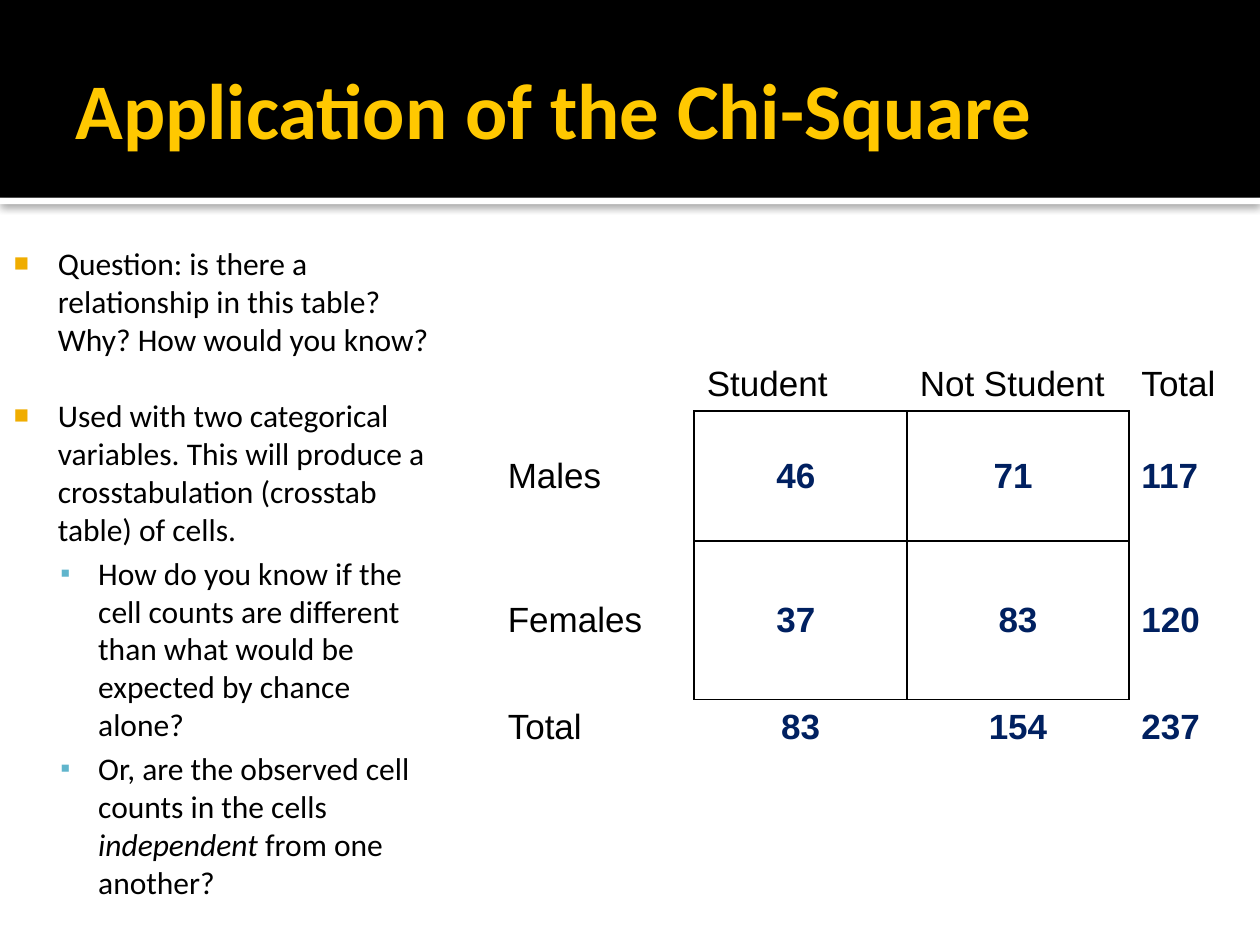
"""Build a slide on the chi-square test with a crosstab of observed counts."""
from lxml import etree
from pptx import Presentation
from pptx import util as u
from pptx.dml.color import RGBColor
from pptx.enum import shapes, text
from pptx.oxml import parse_xml
from pptx.oxml.ns import nsdecls, qn

BLACK, NAVY, GOLD = "000000", "002060", "FFC800"


def rgb(code):
    return RGBColor.from_string(code)


def write(para, words, size=18, face="Calibri", color=BLACK, bold=False, slant=False):
    run = para.add_run()
    run.text = words
    font = run.font
    font.size, font.name = u.Pt(size), face
    font.bold, font.italic = bold, slant
    font.color.rgb = rgb(color)


deck = Presentation()
deck.slide_width, deck.slide_height = u.Inches(10), u.Inches(7.5)
slide = deck.slides.add_slide(deck.slide_layouts[6])

for top, high, color in [(1.57, 0.05, "FFFFFF"), (0, 1.57, BLACK)]:
    band = slide.shapes.add_shape(shapes.MSO_SHAPE.RECTANGLE, 0, u.Inches(top),
                                  u.Inches(10), u.Inches(high))
    band.fill.solid()
    band.fill.fore_color.rgb = rgb(color)
    band.line.fill.background()
    band.shadow.inherit = False
    if top:
        band._element.spPr.find(qn("a:effectLst")).append(parse_xml(
            f'<a:outerShdw {nsdecls("a")} blurRad="{u.Pt(5)}" dist="{u.Pt(0.8)}" '
            f'dir="5400000" rotWithShape="0"><a:srgbClr val="{BLACK}">'
            '<a:alpha val="60000"/></a:srgbClr></a:outerShdw>'))

frames = []
for left, top, wide, high, inset in [(0.5, 0.17, 9, 1.37, 0.1),
                                     (-0.08, 1.84, 3.67, 5.3, 0.06)]:
    box = slide.shapes.add_textbox(*map(u.Inches, (left, top, wide, high)))
    frame = box.text_frame
    frame.word_wrap = True
    frame.margin_left = u.Inches(inset)
    frames.append(frame)
title, body = frames
title.vertical_anchor = text.MSO_ANCHOR.MIDDLE
write(title.paragraphs[0], "Application of the Chi-Square", size=45, color=GOLD, bold=True)

body.margin_top = u.Inches(0.1)
levels = [(0.48, -0.35, "■", "F0AD00", 80), (0.8, -0.3, "▪", "60B5CC", 90)]
points = [
    (0, 0, ["Question: is there a relationship in this table? Why? How would you know?"]),
    (0, 22, ["Used with two categorical variables. This will produce a crosstabulation "
             "(crosstab table) of cells."]),
    (1, 3.6, ["How do you know if the cell counts are different than what would be "
              "expected by chance alone?"]),
    (1, 3.6, ["Or, are the observed cell counts in the cells ", "independent",
              " from one another?"]),
]
for n, (level, gap, parts) in enumerate(points):
    para = body.add_paragraph() if n else body.paragraphs[0]
    para.level, para.space_before = level, u.Pt(gap)
    left, hang, mark, color, scale = levels[level]
    props = para._p.get_or_add_pPr()
    props.set("marL", str(u.Inches(left)))
    props.set("indent", str(u.Inches(hang)))
    tint = etree.SubElement(props, qn("a:buClr"))
    etree.SubElement(tint, qn("a:srgbClr"), val=color)
    etree.SubElement(props, qn("a:buSzPct"), val=str(scale * 1000))
    etree.SubElement(props, qn("a:buFont"), typeface="Arial")
    etree.SubElement(props, qn("a:buChar"), char=mark)
    for i, words in enumerate(parts):
        write(para, words, slant=i == 1)

rows = [
    ["", "Student", "Not Student", "Total"],
    ["Males", "46 ", "71 ", "117"],
    ["Females", "37 ", "83", "120"],
    ["Total", "83", "154", "237"],
]
grid = slide.shapes.add_table(4, 4, *map(u.Inches, (3.93, 2.83, 5.83, 3.15))).table
grid.first_row = grid.horz_banding = False
grid._tbl.tblPr.find(qn("a:tableStyleId")).text = "{2D5ABB26-0587-4C30-8999-92F81FD0307C}"
for col, wide in zip(grid.columns, [1.58, 1.69, 1.76, 0.8]):
    col.width = u.Inches(wide)
for row, high in zip(grid.rows, [0.43, 1.03, 1.26, 0.43]):
    row.height = u.Inches(high)

for r, row in enumerate(rows):
    for c, words in enumerate(row):
        cell = grid.cell(r, c)
        cell.vertical_anchor = text.MSO_ANCHOR.MIDDLE
        if r in (1, 2) and c in (1, 2):
            for side in "LRTB":
                cell._tc.get_or_add_tcPr().append(parse_xml(
                    f'<a:ln{side} {nsdecls("a")} w="{u.Pt(1)}"><a:solidFill>'
                    f'<a:srgbClr val="{BLACK}"/></a:solidFill></a:ln{side}>'))
        cell.fill.background()
        if not words:
            continue
        para = cell.text_frame.paragraphs[0]
        props = para._p.get_or_add_pPr()
        props.set("marL", str(u.Inches(0.38)))
        props.set("indent", str(u.Inches(-0.38)))
        count = r > 0 and c > 0
        if count and c < 3:
            para.alignment = text.PP_ALIGN.CENTER
        write(para, words, size=20, face="Arial", color=NAVY if count else BLACK, bold=count)

deck.save("out.pptx")
